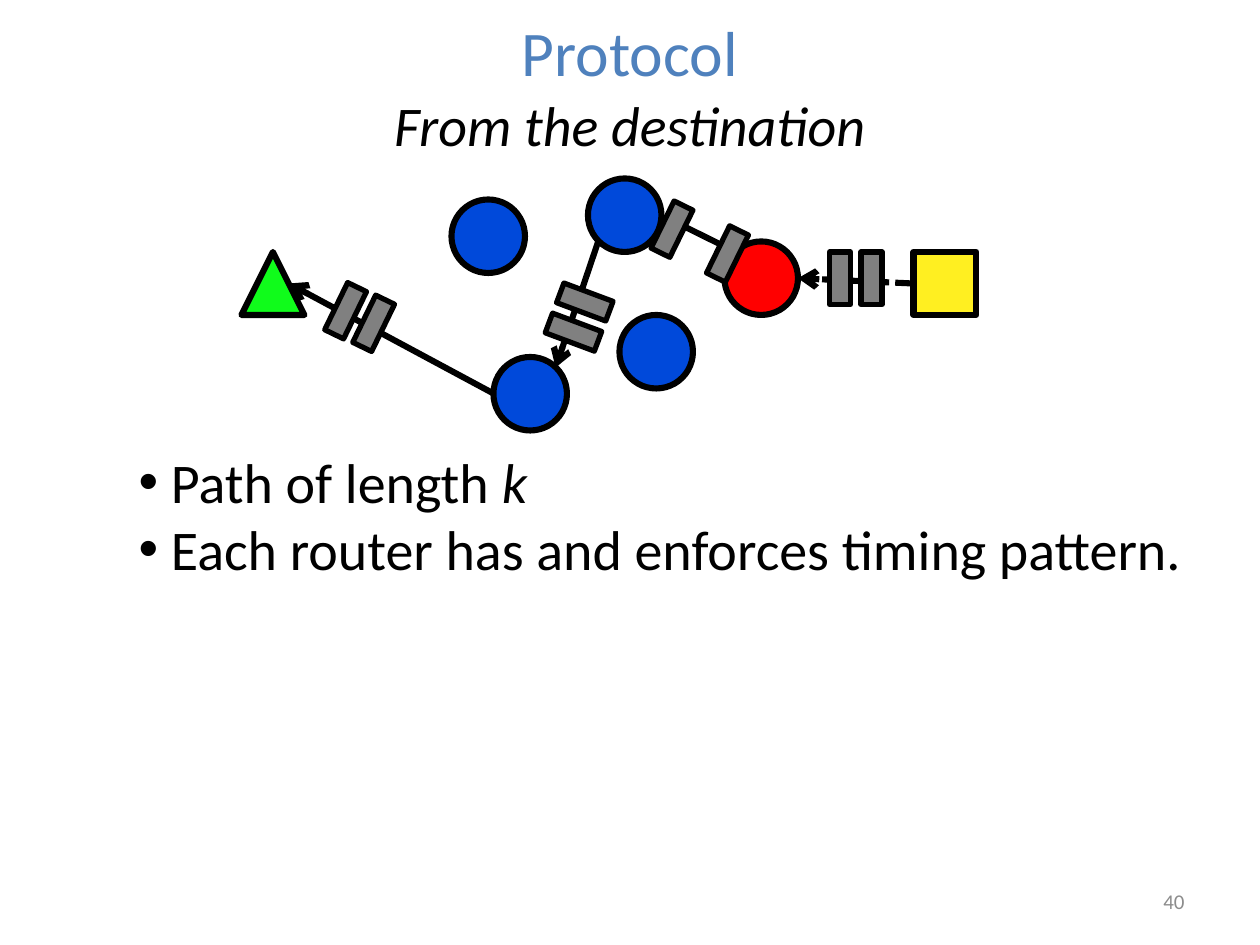
from lxml import etree
from pptx import Presentation
from pptx.dml.color import RGBColor
from pptx.enum.dml import MSO_LINE
from pptx.enum.shapes import MSO_CONNECTOR, MSO_SHAPE
from pptx.enum.text import MSO_ANCHOR, MSO_AUTO_SIZE, PP_ALIGN
from pptx.oxml.ns import qn
from pptx.util import Pt

TRIANGLE, RECT, OVAL = MSO_SHAPE.ISOSCELES_TRIANGLE, MSO_SHAPE.RECTANGLE, MSO_SHAPE.OVAL
STRAIGHT, DASH = MSO_CONNECTOR.STRAIGHT, MSO_LINE.SQUARE_DOT
LEFT, CENTER, RIGHT = PP_ALIGN.LEFT, PP_ALIGN.CENTER, PP_ALIGN.RIGHT
TOP, MIDDLE = MSO_ANCHOR.TOP, MSO_ANCHOR.MIDDLE
NO_FIT = MSO_AUTO_SIZE.NONE

COLORS = {
    "title": "4F81BD", "ink": "000000", "number": "8C8C8C", "gate": "808080",
    "user": "10FC1B", "server": "FFEF21", "router": "0049DA", "exit": "FF0000",
}
NODES = [
    (TRIANGLE, 138, 144, 36, "user"), (RECT, 522, 144, 36, "server"),
]
ROUTERS = [
    (258, 114, "router"), (282, 204, "router"), (336, 102, "router"),
    (414, 138, "exit"), (354, 180, "router"),
]
LINKS = [
    (282.25, 225, 165, 162, None), (522, 162, 456, 159, DASH),
    (420.5, 144, 378, 123, None), (342, 137.5, 317.5, 210, None),
]
GATES = [
    (492, 144, 0), (474, 144, 0),
    (409.7, 130.2, 26.1), (378, 116, 26.1),
    (328.2, 157.6, 290.5), (321.7, 174.8, 290.5),
    (207.5, 169.8, 25.9), (191.5, 162.6, 25.9),
]


def rgb(name):
    return RGBColor.from_string(COLORS[name])


def apply(obj, values):
    for name, value in values.items():
        setattr(obj, name, value)


def place(sp, x, y, w, h):
    apply(sp, {"left": Pt(x), "top": Pt(y), "width": Pt(w), "height": Pt(h)})


def write(sp, paragraphs, size, color, align, anchor=TOP, **spacing):
    tf = sp.text_frame
    apply(tf, {"word_wrap": True, "auto_size": NO_FIT, "vertical_anchor": anchor})
    for i, runs in enumerate(paragraphs):
        p = tf.add_paragraph() if i else tf.paragraphs[0]
        apply(p, {"alignment": align, "space_before": Pt(0), **spacing})
        for text, italic in runs:
            r = p.add_run()
            r.text = text
            apply(r.font, {"name": "Calibri", "size": Pt(size), "italic": italic})
            r.font.color.rgb = rgb(color)
    return tf


def add_label(slide, box, runs, size, color, align, anchor=TOP):
    sp = slide.shapes.add_textbox(*map(Pt, box))
    write(sp, [runs], size, color, align, anchor)


def add_bullets(tf):
    for p in tf.paragraphs:
        pPr = p._p.get_or_add_pPr()
        apply_xml = {"marL": "0", "indent": "0"}
        for name, value in apply_xml.items():
            pPr.set(name, value)
        etree.SubElement(pPr, qn("a:buFont")).set("typeface", "Arial")
        etree.SubElement(pPr, qn("a:buChar")).set("char", "•")


def add_node(slide, kind, x, y, w, h, color, weight=3.5, rotation=0):
    sp = slide.shapes.add_shape(kind, Pt(x), Pt(y), Pt(w), Pt(h))
    sp.shadow.inherit = False
    sp.rotation = rotation
    sp.fill.solid()
    sp.fill.fore_color.rgb = rgb(color)
    sp.line.color.rgb = rgb("ink")
    sp.line.width = Pt(weight)


def add_arrow(slide, x1, y1, x2, y2, dash):
    cxn = slide.shapes.add_connector(STRAIGHT, Pt(x1), Pt(y1), Pt(x2), Pt(y2))
    cxn.line.color.rgb = rgb("ink")
    apply(cxn.line, {"width": Pt(3.5), "dash_style": dash})
    spPr = cxn._element.spPr
    etree.SubElement(spPr.find(qn("a:ln")), qn("a:tailEnd")).set("type", "arrow")
    etree.SubElement(spPr, qn("a:effectLst"))


def main():
    """Build the protocol slide and save it."""
    prs = Presentation()
    apply(prs, {"slide_width": Pt(720), "slide_height": Pt(540)})
    slide = prs.slides.add_slide(prs.slide_layouts[1])
    title, body = slide.placeholders

    place(title, 36, 12, 648, 42)
    write(title, [[("Protocol", False)]], 36.3, "title", CENTER, MIDDLE, line_spacing=0.8)
    add_label(slide, (204, 48, 312, 46), [("From the destination", True)],
              32, "ink", CENTER)

    for kind, x, y, size, color in NODES:
        add_node(slide, kind, x, y, size, size, color)
    for link in LINKS:
        add_arrow(slide, *link)
    for x, y, color in ROUTERS:
        add_node(slide, OVAL, x, y, 42, 42, color)
    for x, y, rotation in GATES:
        add_node(slide, RECT, x, y, 12, 30, "gate", 3, rotation)

    place(body, 72, 252, 612, 85)
    add_bullets(write(body, [
        [(" Path of length ", False), ("k", True)],
        [(" Each router has and enforces timing pattern.", False)],
    ], 32, "ink", LEFT))
    add_label(slide, (516, 500.5, 168, 28.75), [("40", False)], 12, "number", RIGHT, MIDDLE)
    prs.save("out.pptx")


if __name__ == "__main__":
    main()
